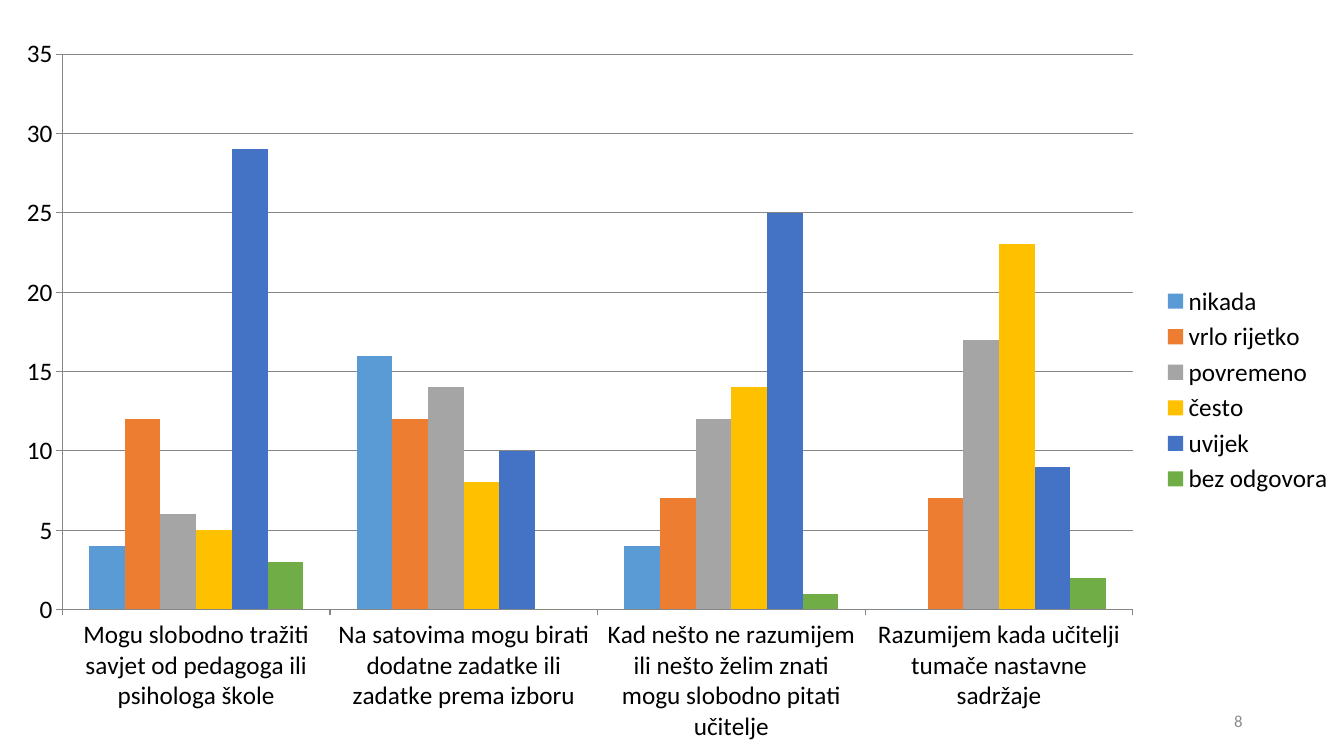
from pptx import Presentation, util as u
from pptx.chart.data import CategoryChartData
from pptx.dml.color import RGBColor
from pptx.enum import chart as ch, text

WIDE, HIGH = 13.33, 7.5
FONT = "Calibri"
COLORS = {
    "nikada": "5B9BD5",
    "vrlo rijetko": "ED7D31",
    "povremeno": "A5A5A5",
    "često": "FFC000",
    "uvijek": "4472C4",
    "bez odgovora": "70AD47",
    "text": "000000",
    "number": "8C8C8C",
    "line": "868686",
}
ANSWERS = {
    "nikada": (4, 16, 4, 0),
    "vrlo rijetko": (12, 12, 7, 7),
    "povremeno": (6, 14, 12, 17),
    "često": (5, 8, 14, 23),
    "uvijek": (29, 10, 25, 9),
    "bez odgovora": (3, 0, 1, 2),
}
CLAIMS = (
    "Mogu slobodno tražiti savjet od pedagoga ili psihologa škole",
    "Na satovima mogu birati dodatne zadatke ili zadatke prema izboru",
    "Kad nešto ne razumijem ili nešto želim znati mogu slobodno pitati učitelje",
    "Razumijem kada učitelji tumače nastavne sadržaje",
)


def color(name):
    return RGBColor.from_string(COLORS[name])


def apply(item, **style):
    for key, value in style.items():
        setattr(item, key, value)


def place(left, top, width, height):
    """Turn shares of the slide's size into lengths."""
    return (u.Inches(left * WIDE), u.Inches(top * HIGH),
            u.Inches(width * WIDE), u.Inches(height * HIGH))


def style_font(font, size, name):
    apply(font, name=FONT, size=u.Pt(size))
    font.color.rgb = color(name)


def style_line(line):
    line.color.rgb = color("line")
    line.width = u.Pt(0.75)


def add_bars(slide, box):
    data = CategoryChartData()
    data.categories = CLAIMS
    for name, values in ANSWERS.items():
        data.add_series(name, values)
    kind = ch.XL_CHART_TYPE.COLUMN_CLUSTERED
    chart = slide.shapes.add_chart(kind, *box, data).chart
    apply(chart, has_title=False, has_legend=True)
    style_font(chart.font, 18, "text")
    apply(chart.legend, position=ch.XL_LEGEND_POSITION.RIGHT,
          include_in_layout=False)

    for axis in (chart.category_axis, chart.value_axis):
        apply(axis, major_tick_mark=ch.XL_TICK_MARK.OUTSIDE,
              minor_tick_mark=ch.XL_TICK_MARK.NONE)
        style_line(axis.format.line)
    apply(chart.value_axis, minimum_scale=0, maximum_scale=35, major_unit=5,
          has_major_gridlines=True)
    style_line(chart.value_axis.major_gridlines.format.line)

    plot = chart.plots[0]
    apply(plot, gap_width=150, overlap=0, vary_by_categories=False)
    for bars in plot.series:
        bars.invert_if_negative = False
        bars.format.fill.solid()
        bars.format.fill.fore_color.rgb = color(bars.name)


def add_number(slide, label, box):
    frame = slide.shapes.add_textbox(*box).text_frame
    apply(frame, word_wrap=True, vertical_anchor=text.MSO_ANCHOR.MIDDLE)
    line = frame.paragraphs[0]
    apply(line, text=label, alignment=text.PP_ALIGN.RIGHT)
    style_font(line.runs[0].font, 12, "number")


def main():
    deck = Presentation()
    apply(deck, slide_width=u.Inches(WIDE), slide_height=u.Inches(HIGH))
    slide = deck.slides.add_slide(deck.slide_layouts[6])
    add_bars(slide, place(0, 0.032, 1, 0.968))
    add_number(slide, "8", place(0.707, 0.927, 0.225, 0.053))
    deck.save("out.pptx")


if __name__ == "__main__":
    main()
